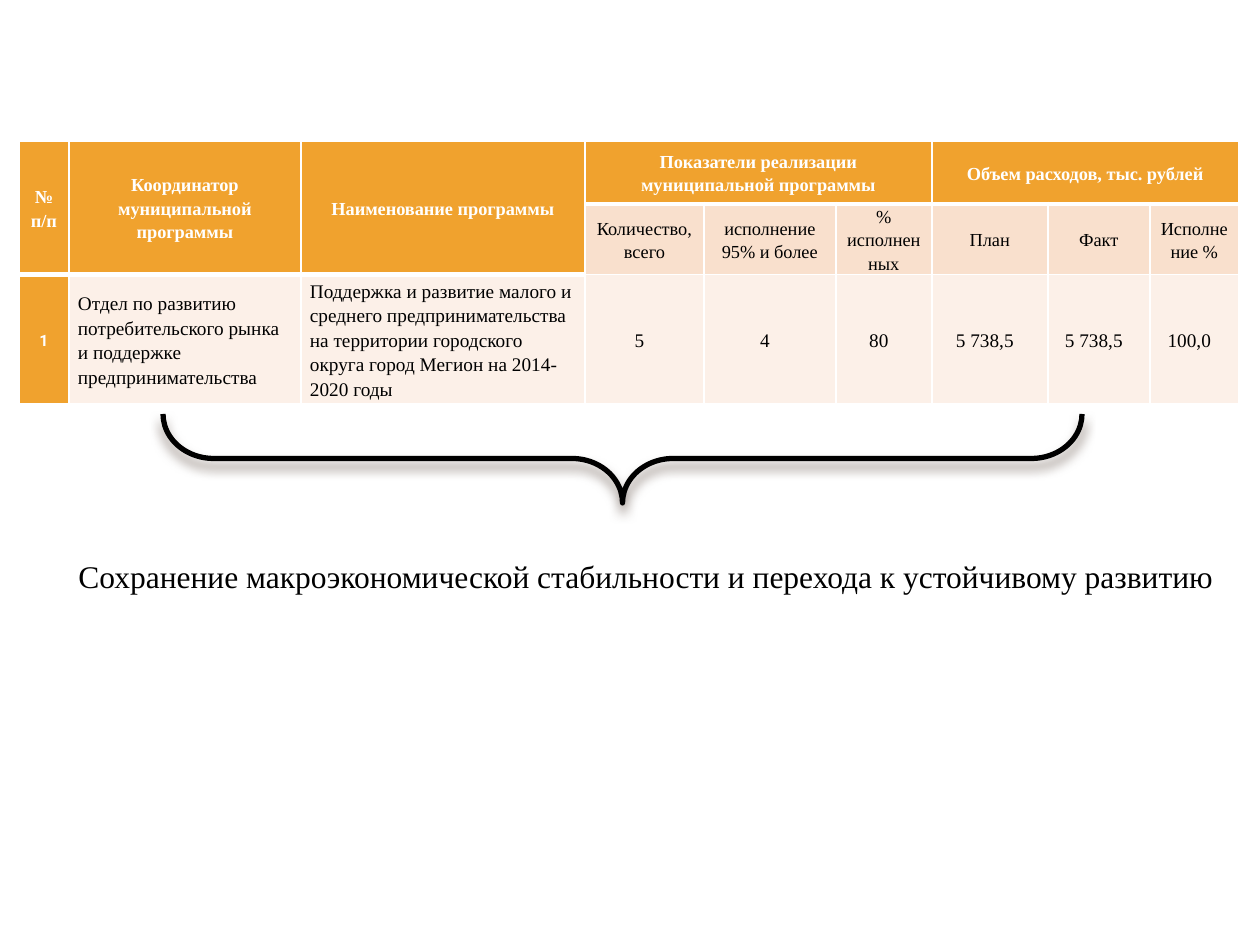
"""Build the slide on one municipal programme: its table, a brace and the outcome."""
import pptx
import pptx.dml.color
import pptx.enum.shapes
import pptx.enum.text
import pptx.oxml
import pptx.util

PX = 914400 / 126
SERIF = "Times New Roman"
WHITE, BLACK = "FFFFFF", "000000"
GOLD, PEACH, CREAM = "F0A22E", "F9E0CD", "FCF0E8"
NS = 'xmlns:a="http://schemas.openxmlformats.org/drawingml/2006/main"'

WIDTHS = [50, 232, 284, 119, 132, 96, 116, 102, 89]
HEIGHTS = [63, 67, 130]
ROWS = [
    ["№ п/п", "Координатор муниципальной программы", "Наименование программы",
     "Показатели реализации муниципальной программы", "", "",
     "Объем расходов, тыс. рублей", "", ""],
    ["", "", "", "Количество, всего", "исполнение 95% и более", "% исполненных",
     "План", "Факт", "Исполнение %"],
    ["1", "Отдел по развитию потребительского рынка и поддержке предпринимательства",
     "Поддержка и развитие малого и среднего предпринимательства на территории "
     "городского округа город Мегион на 2014-2020 годы",
     "5", "4", "80", "5 738,5", "5 738,5", "100,0"],
]
MERGES = [(0, 0, 1, 0), (0, 1, 1, 1), (0, 2, 1, 2), (0, 3, 0, 5), (0, 6, 0, 8)]
GOAL = "Сохранение макроэкономической стабильности и перехода к устойчивому развитию"


def emu(px):
    return round(px * PX)


def box(*sides):
    return [emu(side) for side in sides]


def color(code):
    return pptx.dml.color.RGBColor.from_string(code)


def style(para, size, code, bold=False, name=SERIF):
    font = para.font
    font.size, font.bold, font.name = pptx.util.Pt(size), bold, name
    font.color.rgb = color(code)


def border(cell, side, width):
    cell._tc.get_or_add_tcPr().append(pptx.oxml.parse_xml(
        f'<a:ln{side} {NS} w="{pptx.util.Pt(width)}"><a:solidFill>'
        f'<a:srgbClr val="{WHITE}"/></a:solidFill></a:ln{side}>'))


def fill_cell(cell, text, row, col):
    head = row == 0 or col == 0 or (row == 1 and col < 3)
    value = row == 2 and col > 2
    for side in "LR":
        border(cell, side, 1)
    border(cell, "B", 3 if head and row < 2 else 1)
    cell.fill.solid()
    cell.fill.fore_color.rgb = color(GOLD if head else PEACH if row == 1 else CREAM)
    cell.margin_left, cell.margin_right = box(9, 19 if value else 9)
    cell.margin_top = cell.margin_bottom = 0
    cell.vertical_anchor = pptx.enum.text.MSO_ANCHOR.MIDDLE
    cell.text = text
    para = cell.text_frame.paragraphs[0]
    para.line_spacing = 1.15
    align = pptx.enum.text.PP_ALIGN
    para.alignment = align.LEFT if row == 2 and col in (1, 2) else align.CENTER
    if row == 2 and col == 0:
        style(para, 9, WHITE, True, "Roboto")
    else:
        style(para, 11 if row == 2 else 10.5, WHITE if head else BLACK, head)


def add_brace(slide):
    kind = pptx.enum.shapes.MSO_SHAPE.RIGHT_BRACE
    brace = slide.shapes.add_shape(kind, *box(578, -1, 89, 919))
    brace.rotation = 90
    brace.adjustments[0], brace.adjustments[1] = 0.57, 0.5
    brace.fill.background()
    brace.line.color.rgb = color(BLACK)
    brace.line.width = pptx.util.Pt(3)
    brace._element.spPr.append(pptx.oxml.parse_xml(
        f'<a:effectLst {NS}><a:outerShdw blurRad="{pptx.util.Pt(6)}" '
        f'dist="{pptx.util.Pt(4)}" dir="5400000" rotWithShape="0">'
        '<a:srgbClr val="4E3B30"><a:alpha val="60000"/></a:srgbClr>'
        '</a:outerShdw></a:effectLst>'))


def add_grid(slide):
    place = box(19, 141, sum(WIDTHS), sum(HEIGHTS))
    grid = slide.shapes.add_table(len(HEIGHTS), len(WIDTHS), *place).table
    for col, width in zip(grid.columns, WIDTHS):
        col.width = emu(width)
    for row, height in zip(grid.rows, HEIGHTS):
        row.height = emu(height)
    for row, texts in enumerate(ROWS):
        for col, text in enumerate(texts):
            fill_cell(grid.cell(row, col), text, row, col)
    for top, left, low, right in MERGES:
        grid.cell(top, left).merge(grid.cell(low, right))


def add_goal(slide):
    frame = slide.shapes.add_textbox(*box(66, 551, 1176, 50)).text_frame
    frame.word_wrap = True
    frame.auto_size = pptx.enum.text.MSO_AUTO_SIZE.SHAPE_TO_FIT_TEXT
    frame.text = GOAL
    style(frame.paragraphs[0], 18, BLACK)


def main():
    deck = pptx.Presentation()
    deck.slide_width, deck.slide_height = box(1260, 945)
    slide = deck.slides.add_slide(deck.slide_layouts[6])
    add_brace(slide)
    add_grid(slide)
    add_goal(slide)
    deck.save("out.pptx")


if __name__ == "__main__":
    main()
